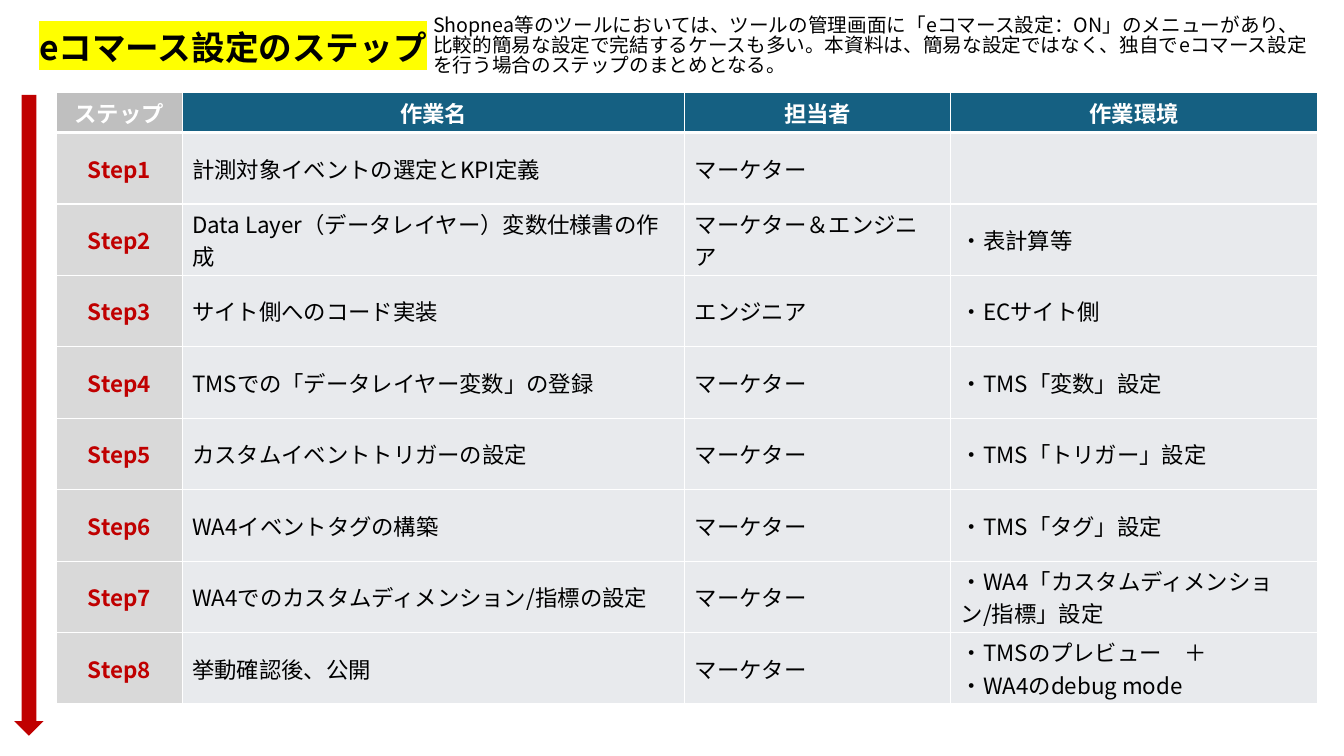
from lxml.etree import SubElement
from pptx import Presentation
from pptx.dml.color import RGBColor
from pptx.enum.shapes import MSO_SHAPE
from pptx.enum.text import MSO_ANCHOR, MSO_AUTO_SIZE, PP_ALIGN
from pptx.oxml.ns import qn
from pptx.util import Cm, Pt

COLORS = {
    "white": "FFFFFF", "black": "000000", "red": "C00000", "yellow": "FFFF00",
    "blue": "156082", "gray": "BFBFBF", "light_gray": "D9D9D9", "pale": "E8EAED",
}
FONT = "Noto Sans CJK JP"


def rgb(name):
    return RGBColor.from_string(COLORS[name])


def write(tf, text, size=16, color="black", bold=False, align=PP_ALIGN.LEFT,
          spacing=None, highlight=None):
    """Fill a text frame, one paragraph per line of text."""
    for i, line in enumerate(text.split("\n")):
        p = tf.paragraphs[0] if i == 0 else tf.add_paragraph()
        p.alignment = align
        if spacing:
            p.line_spacing = spacing
        r = p.add_run()
        r.text = line
        r.font.size, r.font.bold, r.font.name = Pt(size), bold, FONT
        r.font.color.rgb = rgb(color)
        rPr = r.font._element
        ea = SubElement(rPr, qn("a:ea"), typeface=FONT)
        rPr.find(qn("a:latin")).addnext(ea)
        if highlight:
            mark = SubElement(rPr, qn("a:highlight"))
            SubElement(mark, qn("a:srgbClr"), val=COLORS[highlight])
            rPr.find(qn("a:solidFill")).addnext(mark)


class Deck:
    def __init__(self, width, height):
        self.prs = Presentation()
        self.prs.slide_width, self.prs.slide_height = Cm(width), Cm(height)
        self.s = self.prs.slides.add_slide(self.prs.slide_layouts[6])

    def text(self, box, text, **style):
        tf = self.s.shapes.add_textbox(*map(Cm, box)).text_frame
        tf.word_wrap = True
        tf.auto_size = MSO_AUTO_SIZE.SHAPE_TO_FIT_TEXT
        write(tf, text, **style)

    def arrow(self, box, color):
        sp = self.s.shapes.add_shape(MSO_SHAPE.DOWN_ARROW, *map(Cm, box))
        sp.shadow.inherit = False
        sp.fill.solid()
        sp.fill.fore_color.rgb = rgb(color)
        sp.line.fill.background()

    def table(self, left, top, widths, heights):
        table = self.s.shapes.add_table(
            len(heights), len(widths), Cm(left), Cm(top),
            Cm(sum(widths)), Cm(sum(heights))).table
        table.horz_banding = False
        for column, width in zip(table.columns, widths):
            column.width = Cm(width)
        for row, height in zip(table.rows, heights):
            row.height = Cm(height)
        return table

    def cell(self, cell, text, fill, top=1, bottom=1, **style):
        cell.fill.solid()
        cell.fill.fore_color.rgb = rgb(fill)
        cell.vertical_anchor = MSO_ANCHOR.MIDDLE
        cell.margin_top = cell.margin_bottom = Cm(0.05)
        write(cell.text_frame, text, **style)
        # White borders, in the order the schema requires
        tcPr = cell._tc.get_or_add_tcPr()
        sides = {"lnL": 1, "lnR": 1, "lnT": top, "lnB": bottom}
        for i, (side, points) in enumerate(sides.items()):
            ln = SubElement(tcPr, qn(f"a:{side}"), w=str(Pt(points)))
            SubElement(SubElement(ln, qn("a:solidFill")), qn("a:srgbClr"),
                       val=COLORS["white"])
            tcPr.insert(i, ln)


HEADERS = ["ステップ", "作業名", "担当者", "作業環境"]
MARKETER, ENGINEER = "マーケター", "エンジニア"
STEPS = [
    ("計測対象イベントの選定とKPI定義", MARKETER, ""),
    ("Data Layer（データレイヤー）変数仕様書の作成", f"{MARKETER}＆{ENGINEER}", "・表計算等"),
    ("サイト側へのコード実装", ENGINEER, "・ECサイト側"),
    ("TMSでの「データレイヤー変数」の登録", MARKETER, "・TMS「変数」設定"),
    ("カスタムイベントトリガーの設定", MARKETER, "・TMS「トリガー」設定"),
    ("WA4イベントタグの構築", MARKETER, "・TMS「タグ」設定"),
    ("WA4でのカスタムディメンション/指標の設定", MARKETER,
     "・WA4「カスタムディメンション/指標」設定"),
    ("挙動確認後、公開", MARKETER, "・TMSのプレビュー　＋\n・WA4のdebug mode"),
]


def main():
    deck = Deck(33.87, 19.05)

    # Title
    deck.text((0.74, 0.66, 30.96, 1.27), "eコマース設定のステップ",
              size=24, bold=True, spacing=0.9, highlight="yellow")

    # Table of steps
    table = deck.table(1.42, 2.34, [3.17, 12.67, 6.7, 9.24],
                       [1] + [1.8] * len(STEPS))
    for col, header in enumerate(HEADERS):
        deck.cell(table.cell(0, col), header, "blue" if col else "gray",
                  bottom=3, color="white", bold=True, align=PP_ALIGN.CENTER)
    for row, step in enumerate(STEPS, 1):
        top = 3 if row == 1 else 1
        deck.cell(table.cell(row, 0), f"Step{row}", "light_gray", top=top,
                  color="red", bold=True, align=PP_ALIGN.CENTER)
        for col, text in enumerate(step, 1):
            deck.cell(table.cell(row, col), text, "pale", top=top)

    # Progress arrow
    deck.arrow((0.36, 2.39, 0.74, 16.15), "red")

    # Note beside the title
    deck.text((10.67, 0.28, 22.53, 2.06),
              "Shopnea等のツールにおいては、ツールの管理画面に「eコマース設定：ON」の"
              "メニューがあり、比較的簡易な設定で完結するケースも多い。本資料は、簡易な設定"
              "ではなく、独自でeコマース設定を行う場合のステップのまとめとなる。",
              size=14, spacing=0.85)

    deck.prs.save("out.pptx")


if __name__ == "__main__":
    main()
